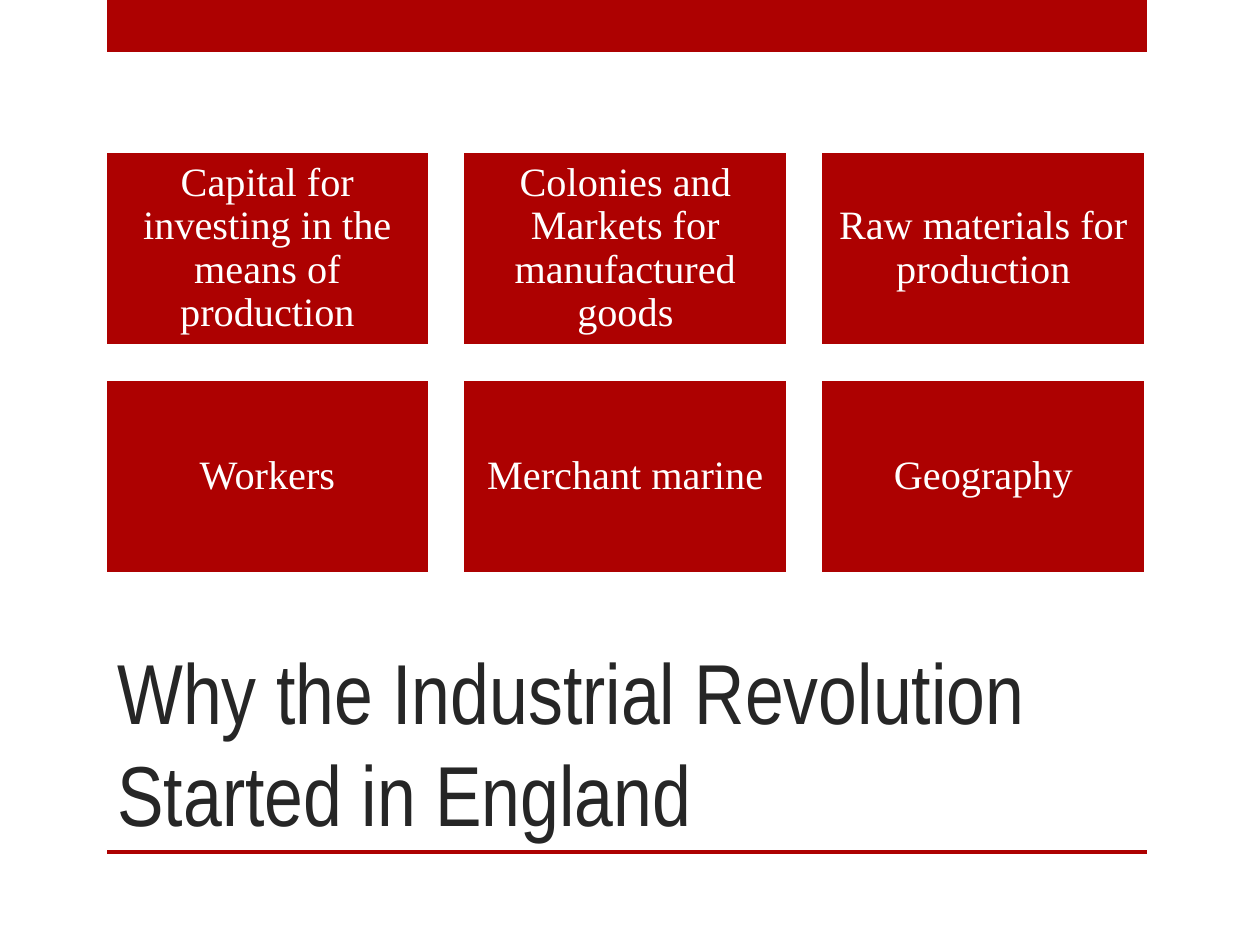
from dataclasses import dataclass

from pptx import Presentation
from pptx.dml.color import RGBColor
from pptx.enum.shapes import MSO_SHAPE
from pptx.enum.text import MSO_ANCHOR, PP_ALIGN
from pptx.util import Emu, Pt

EMU_PER_PX = 914400 / 126


@dataclass(frozen=True)
class Theme:
    """Colours, fonts and type sizes of the deck."""
    accent: RGBColor = RGBColor(0xAD, 0x01, 0x01)
    paper: RGBColor = RGBColor(0xFF, 0xFF, 0xFF)
    ink: RGBColor = RGBColor(0x26, 0x26, 0x26)
    title_font: str = "Arial Narrow"
    body_font: str = "Times New Roman"
    title_size: float = 48.6
    body_size: float = 23


THEME = Theme()
REASONS = [
    ["Capital for investing in the means of production",
     "Colonies and Markets for manufactured goods",
     "Raw materials for production"],
    ["Workers", "Merchant marine", "Geography"],
]


def px(length):
    """Turn pixels into EMU."""
    return Emu(round(length * EMU_PER_PX))


def add_block(page, box):
    """Add a plain accent rectangle."""
    block = page.shapes.add_shape(MSO_SHAPE.RECTANGLE, *map(px, box))
    block.shadow.inherit = False
    block.fill.solid()
    block.fill.fore_color.rgb = THEME.accent
    block.line.fill.background()
    return block


def set_text(shape, text, font, size, color):
    """Write one wrapped paragraph and return it."""
    frame = shape.text_frame
    frame.text = text
    frame.word_wrap = True
    para = frame.paragraphs[0]
    span = para.runs[0]
    span.font.name = font
    span.font.size = Pt(size)
    span.font.color.rgb = color
    return para


def add_card(page, box, text):
    """Add a white-edged card with centred text."""
    card = add_block(page, box)
    card.line.color.rgb = THEME.paper
    card.line.width = Pt(1.75)
    para = set_text(card, text, THEME.body_font, THEME.body_size, THEME.paper)
    para.alignment = PP_ALIGN.CENTER
    para.line_spacing = 0.9
    frame = card.text_frame
    frame.vertical_anchor = MSO_ANCHOR.MIDDLE
    frame.margin_left = frame.margin_right = px(12)
    frame.margin_top = frame.margin_bottom = px(12)


def add_card_grid(page, box, rows, gap):
    """Fill the box with equal cards, one for each text."""
    left, top, width, height = box
    card_width = (width - gap * (len(rows[0]) - 1)) // len(rows[0])
    card_height = (height - gap * (len(rows) - 1)) // len(rows)
    for row, texts in enumerate(rows):
        for column, text in enumerate(texts):
            card_left = left + column * (card_width + gap)
            card_top = top + row * (card_height + gap)
            add_card(page, (card_left, card_top, card_width, card_height), text)


def add_title(page, box, text):
    """Add the title, resting on the bottom of its box."""
    title = page.shapes.add_textbox(*map(px, box))
    set_text(title, text, THEME.title_font, THEME.title_size, THEME.ink)
    title.text_frame.vertical_anchor = MSO_ANCHOR.BOTTOM


def main():
    """Build and save the deck."""
    deck = Presentation()
    deck.slide_width, deck.slide_height = px(1260), px(945)
    page = deck.slides.add_slide(deck.slide_layouts[6])
    add_block(page, (107, 0, 1040, 52))
    add_block(page, (107, 850, 1040, 4))
    add_title(page, (105, 630, 935, 220),
              "Why the Industrial Revolution Started in England")
    add_card_grid(page, (105, 151, 1041, 423), REASONS, 33)
    deck.save("out.pptx")


if __name__ == "__main__":
    main()
